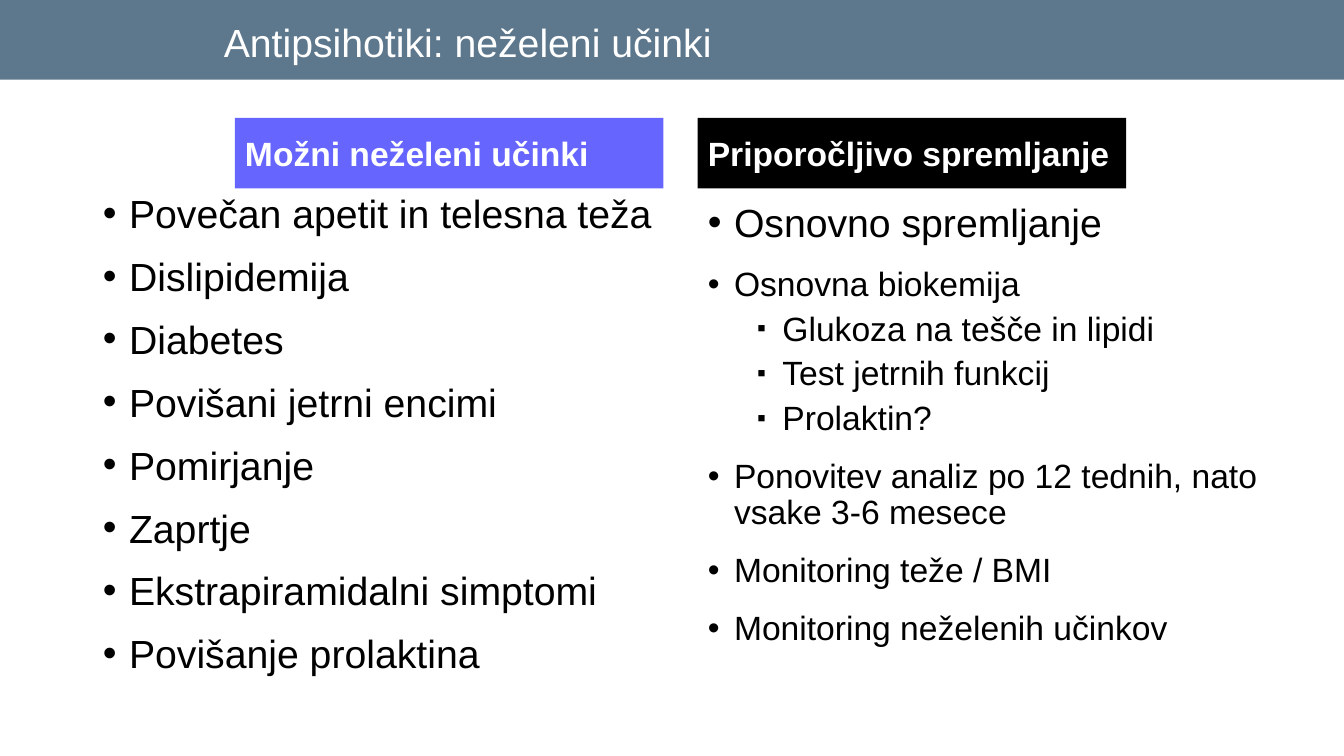
from lxml import etree
from pptx import Presentation
from pptx.dml.color import RGBColor
from pptx.enum.shapes import MSO_SHAPE
from pptx.enum.text import MSO_ANCHOR, MSO_AUTO_SIZE, PP_ALIGN
from pptx.oxml.ns import qn
from pptx.util import Inches, Pt

RECT = MSO_SHAPE.RECTANGLE
TOP, MIDDLE, BOTTOM = MSO_ANCHOR.TOP, MSO_ANCHOR.MIDDLE, MSO_ANCHOR.BOTTOM
FIXED = MSO_AUTO_SIZE.NONE
LEFT = PP_ALIGN.LEFT
FONT = "Arial"
COLORS = {"banner": "5D778D", "effects": "6666FF", "checks": "000000",
          "text": "000000", "light": "FFFFFF"}
BULLETS = [("•", 0.26, 0.26, 100), ("▪", 0.74, 0.25, 75)]
EFFECTS = [(text, 0, 28, 0.8, 18) for text in (
    "Povečan apetit in telesna teža", "Dislipidemija", "Diabetes",
    "Povišani jetrni encimi", "Pomirjanje", "Zaprtje",
    "Ekstrapiramidalni simptomi", "Povišanje prolaktina")]
CHECKS = [("Osnovno spremljanje", 0, 28, 1.0, 18)] + [
    (text, level, 24, 0.9, 6 if level else 15.5) for text, level in (
        ("Osnovna biokemija", 0),
        ("Glukoza na tešče in lipidi", 1),
        ("Test jetrnih funkcij", 1),
        ("Prolaktin?", 1),
        ("Ponovitev analiz po 12 tednih, nato vsake 3-6 mesece", 0),
        ("Monitoring teže / BMI", 0),
        ("Monitoring neželenih učinkov", 0))]


def color(name):
    """Return the named colour."""
    return RGBColor.from_string(COLORS[name])


def place(shape, box, anchor):
    """Move a shape to a box in inches and fix its text frame."""
    shape.left, shape.top, shape.width, shape.height = map(Inches, box)
    frame = shape.text_frame
    frame.word_wrap = True
    frame.auto_size = FIXED
    frame.vertical_anchor = anchor
    return frame


def style(para, size, ink, bold=False):
    """Set the look of a paragraph."""
    para.alignment = LEFT
    font = para.font
    font.name, font.size, font.bold = FONT, Pt(size), bold
    font.color.rgb = color(ink)


def bullet(para, level):
    """Give a paragraph the bullet and indent of its level."""
    mark, margin, hang, scale = BULLETS[level]
    props = para._p.get_or_add_pPr()
    props.set("marL", str(Inches(margin)))
    props.set("indent", str(-Inches(hang)))
    tint = etree.SubElement(props, qn("a:buClr"))
    etree.SubElement(tint, qn("a:srgbClr"), val=COLORS["text"])
    etree.SubElement(props, qn("a:buSzPct"), val=str(scale * 1000))
    etree.SubElement(props, qn("a:buFont"), typeface=FONT)
    etree.SubElement(props, qn("a:buChar"), char=mark)


def header(slide, box, text):
    """Draw the banner across the box with the title on it."""
    left, top, width, height = box
    banner = slide.shapes.add_shape(RECT, *map(Inches, box))
    banner.shadow.inherit = False
    banner.fill.solid()
    banner.fill.fore_color.rgb = color("banner")
    banner.line.fill.background()
    title = slide.shapes.title
    title.element.addprevious(banner.element)
    frame = place(title, (left + 2.12, top + 0.08, 8.92, 0.62), BOTTOM)
    frame.text = text
    style(frame.paragraphs[0], 28, "light")


def label(shape, box, text, fill):
    """Fill a heading placeholder with a colour and bold text."""
    frame = place(shape, box, MIDDLE)
    shape.fill.solid()
    shape.fill.fore_color.rgb = color(fill)
    frame.text = text
    style(frame.paragraphs[0], 24, "light", True)


def points(shape, box, items):
    """Fill a body placeholder with a bulleted list."""
    frame = place(shape, box, TOP)
    frame.text = "\n".join(item[0] for item in items)
    for para, (_, level, size, lines, gap) in zip(frame.paragraphs, items):
        para.level = level
        para.line_spacing = lines
        para.space_before = Pt(gap)
        style(para, size, "text")
        bullet(para, level)


def column(head, body, box, shift, text, fill, items):
    """Place a heading, shifted from the left edge, above its list."""
    left, top, width, height = box
    label(head, (left + shift, top, 4.25, 0.7), text, fill)
    points(body, (left, top + 0.75, width, height - 0.75), items)


def main():
    """Build and save the slide."""
    deck = Presentation()
    deck.slide_width, deck.slide_height = Inches(13.33), Inches(7.5)
    slide = deck.slides.add_slide(deck.slide_layouts[4])
    holds = slide.placeholders
    header(slide, (0, 0, 13.33, 0.79), "Antipsihotiki: neželeni učinki")
    column(holds[1], holds[2], (0.92, 1.17, 5.67, 4.67), 1.41,
           "Možni neželeni učinki", "effects", EFFECTS)
    column(holds[3], holds[4], (6.92, 1.17, 6.17, 4.67), 0,
           "Priporočljivo spremljanje", "checks", CHECKS)
    deck.save("out.pptx")


if __name__ == "__main__":
    main()
